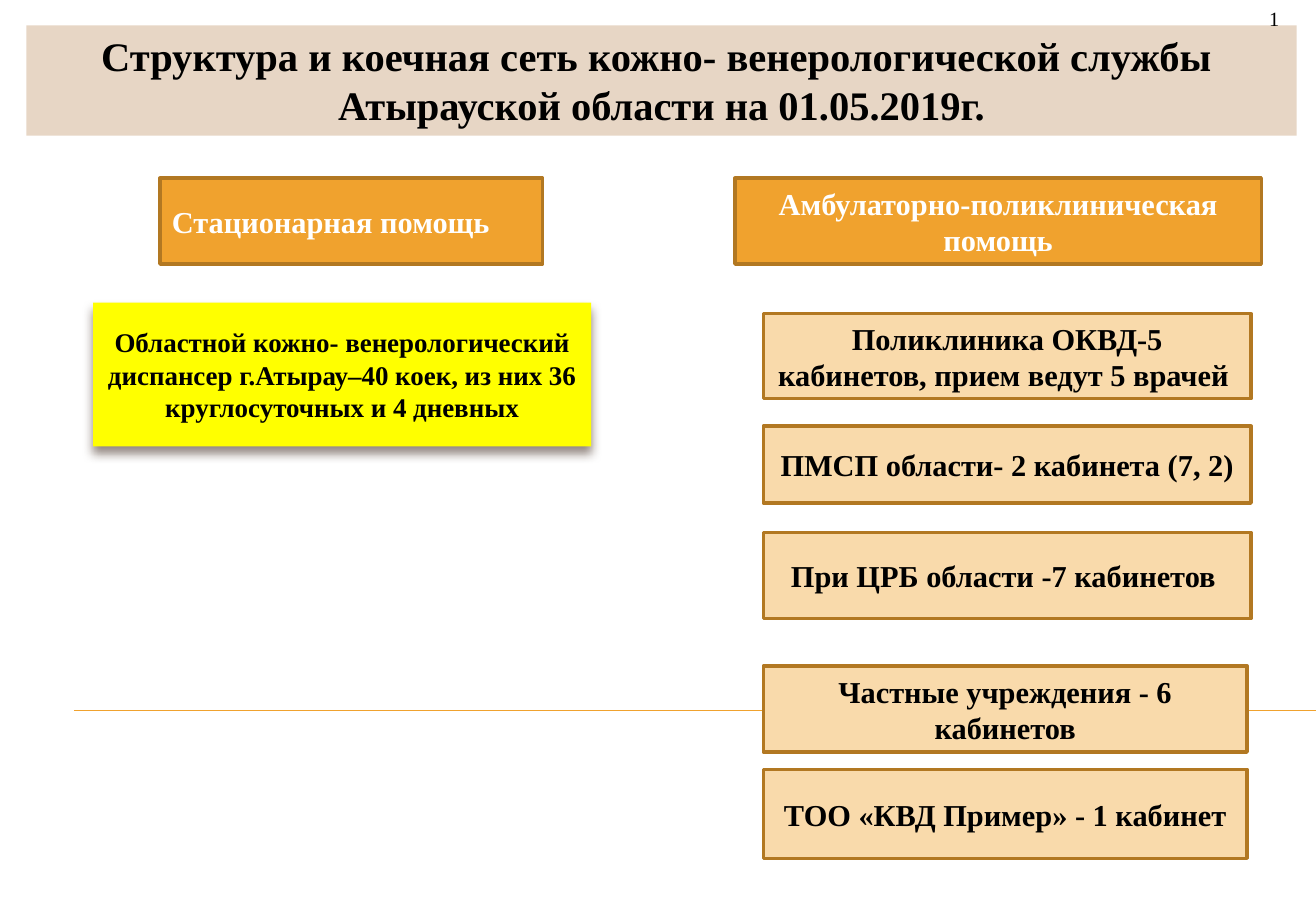
from dataclasses import dataclass

from lxml import etree
from pptx import Presentation
from pptx.dml.color import RGBColor
from pptx.enum.shapes import MSO_CONNECTOR, MSO_SHAPE
from pptx.enum.text import MSO_ANCHOR, PP_ALIGN
from pptx.oxml.ns import qn
from pptx.util import Pt

PX = 7620
RECTANGLE = MSO_SHAPE.RECTANGLE
STRAIGHT = MSO_CONNECTOR.STRAIGHT
TOP, MIDDLE = MSO_ANCHOR.TOP, MSO_ANCHOR.MIDDLE
LEFT, CENTER = PP_ALIGN.LEFT, PP_ALIGN.CENTER


@dataclass(frozen=True)
class Theme:
    font: str = "Times New Roman"
    dark: str = "000000"
    light: str = "FFFFFF"
    banner: str = "E7D6C5"
    heading: str = "F0A22E"
    unit: str = "F9DAAB"
    border: str = "B27822"
    highlight: str = "FFFF00"
    shadow: str = "4E3B30"
    title_size: int = 24
    box_size: int = 18
    highlight_size: int = 16
    number_size: int = 12


THEME = Theme()


def px(*lengths):
    return [length * PX for length in lengths]


def color(value):
    return RGBColor.from_string(value)


def write_text(box, text, *, size=THEME.box_size, ink=THEME.dark, bold=True,
               align=CENTER, anchor=MIDDLE, wrap=True):
    frame = box.text_frame
    frame.word_wrap = wrap
    frame.vertical_anchor = anchor
    frame.text = text
    for para in frame.paragraphs:
        para.alignment = align
        for span in para.runs:
            span.font.name = THEME.font
            span.font.size = Pt(size)
            span.font.bold = bold
            span.font.color.rgb = color(ink)


def add_box(page, place, text, *, fill, border=None, **text_format):
    box = page.shapes.add_shape(RECTANGLE, *px(*place))
    box.shadow.inherit = False
    box.fill.solid()
    box.fill.fore_color.rgb = color(fill)
    if border:
        box.line.color.rgb = color(border)
        box.line.width = Pt(2)
    else:
        box.line.fill.background()
    write_text(box, text, **text_format)
    return box


def add_drop_shadow(box):
    effects = box._element.spPr.find(qn("a:effectLst"))
    shadow = etree.SubElement(
        effects, qn("a:outerShdw"), blurRad=str(Pt(6)), dist=str(Pt(4)),
        dir="5400000", rotWithShape="0")
    tint = etree.SubElement(shadow, qn("a:srgbClr"), val=THEME.shadow)
    etree.SubElement(tint, qn("a:alpha"), val="60000")


def add_rule(page, left, right, y):
    rule = page.shapes.add_connector(STRAIGHT, *px(left, y, right, y))
    rule.line.color.rgb = color(THEME.heading)
    rule.line.width = Pt(0.75)
    etree.SubElement(rule._element.spPr, qn("a:effectLst"))


def add_page_number(page, place, text):
    box = page.shapes.add_textbox(*px(*place))
    write_text(box, text, size=THEME.number_size, bold=False,
               align=LEFT, anchor=TOP, wrap=False)


def main():
    deck = Presentation()
    deck.slide_width, deck.slide_height = px(1300, 900)
    page = deck.slides.add_slide(deck.slide_layouts[6])

    add_rule(page, 73, 1300, 702)
    add_box(page, (26, 25, 1255, 109),
            "Структура и коечная сеть кожно- венерологической службы \n"
            "Атырауской области на 01.05.2019г.",
            fill=THEME.banner, size=THEME.title_size, anchor=TOP)
    dispensary = add_box(
        page, (92, 299, 492, 142),
        "Областной кожно- венерологический диспансер г.Атырау–40 коек, "
        "из них 36 круглосуточных и 4 дневных",
        fill=THEME.highlight, size=THEME.highlight_size)
    add_drop_shadow(dispensary)
    add_page_number(page, (1242, 0, 35, 36), "1")

    headings = [
        (158, 378, "Стационарная помощь", LEFT),
        (726, 520, "Амбулаторно-поликлиническая помощь", CENTER),
    ]
    for left, width, text, align in headings:
        add_box(page, (left, 176, width, 85), text, fill=THEME.heading,
                border=THEME.border, ink=THEME.light, align=align)

    units = [
        (310, 482, 84, "Поликлиника ОКВД-5 кабинетов, прием ведут 5 врачей "),
        (421, 482, 76, "ПМСП области- 2 кабинета (7, 2)"),
        (526, 482, 85, "При ЦРБ области -7 кабинетов "),
        (658, 478, 85, "Частные учреждения - 6 кабинетов"),
        (760, 478, 88, "ТОО «КВД Пример» - 1 кабинет"),
    ]
    for top, width, height, text in units:
        add_box(page, (754, top, width, height), text,
                fill=THEME.unit, border=THEME.border)

    deck.save("out.pptx")


if __name__ == "__main__":
    main()
